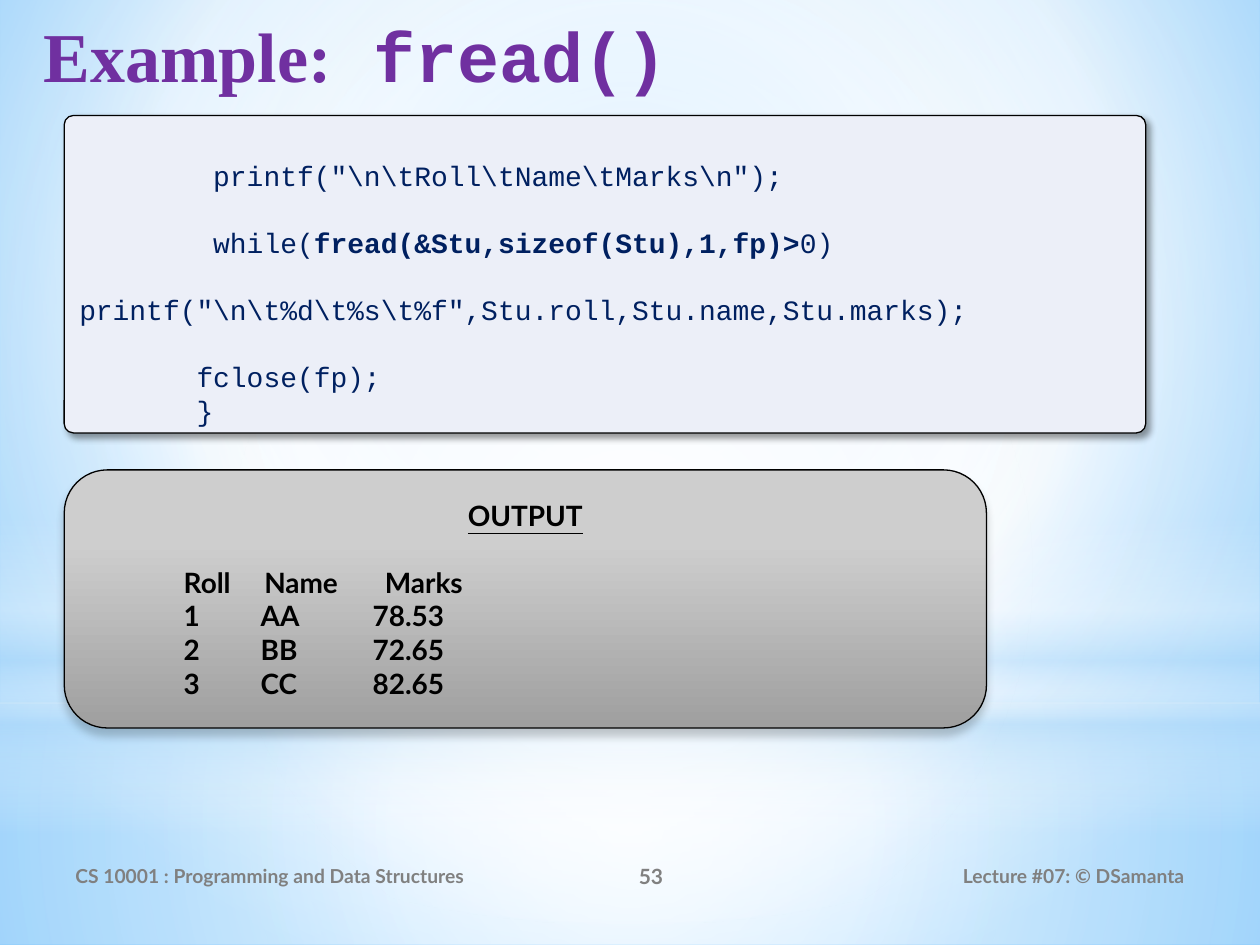
from dataclasses import dataclass

from pptx import Presentation
from pptx.dml.color import RGBColor
from pptx.enum.shapes import MSO_SHAPE
from pptx.enum.text import MSO_ANCHOR, PP_ALIGN
from pptx.oxml import parse_xml
from pptx.oxml.ns import nsdecls, qn
from pptx.util import Pt

RECT, OVAL, ROUND = MSO_SHAPE.RECTANGLE, MSO_SHAPE.OVAL, MSO_SHAPE.ROUNDED_RECTANGLE
TOP, MIDDLE = MSO_ANCHOR.TOP, MSO_ANCHOR.MIDDLE
LEFT, CENTER, RIGHT = PP_ALIGN.LEFT, PP_ALIGN.CENTER, PP_ALIGN.RIGHT


@dataclass(frozen=True)
class Theme:
    """Colours, fonts and type sizes of the slide."""
    white: str = "FFFFFF"
    sky: str = "B4DCFA"
    title: str = "7030A0"
    code: str = "002060"
    code_fill: str = "ECEFF8"
    ink: str = "000000"
    footer: str = "808080"
    serif: str = "Times New Roman"
    mono: str = "Courier New"
    sans: str = "Lato"
    title_size: float = 40
    body_size: float = 16
    number_size: float = 12
    footer_size: float = 11
    leading: float = 19.2


T = Theme()
CENTRE = (50, 50, 50, 50)


def set_gradient(fill, owner, stops, focus=None):
    """Fill with (position, colour, opacity) stops, radial if a focus is given, else downward."""
    fill.gradient()
    old = next(owner.iter(qn("a:gradFill")))
    gs = "".join(
        f'<a:gs pos="{pos * 1000}"><a:srgbClr val="{color}">'
        f'<a:alpha val="{alpha * 1000}"/></a:srgbClr></a:gs>'
        for pos, color, alpha in stops)
    if focus:
        sides = " ".join(f'{k}="{v * 1000}"' for k, v in zip("ltrb", focus))
        shade = f'<a:path path="circle"><a:fillToRect {sides}/></a:path>'
    else:
        shade = '<a:lin ang="5400000" scaled="0"/>'
    new = parse_xml(f'<a:gradFill {nsdecls("a")} rotWithShape="1">'
                    f'<a:gsLst>{gs}</a:gsLst>{shade}</a:gradFill>')
    old.getparent().replace(old, new)


def add_shape(s, kind, box):
    """Add a preset shape without line or shadow."""
    sp = s.shapes.add_shape(kind, *map(Pt, box))
    sp.shadow.inherit = False
    sp.line.fill.background()
    return sp


def add_panel(s, box, radius, shadow):
    """Add an outlined rounded panel with a (opacity, blur, distance, angle) shadow."""
    sp = add_shape(s, ROUND, box)
    sp.adjustments[0] = radius
    sp.line.color.rgb = RGBColor.from_string(T.ink)
    sp.line.width = Pt(0.75)
    alpha, blur, dist, angle = shadow
    next(sp.element.iter(qn("a:effectLst"))).append(parse_xml(
        f'<a:outerShdw {nsdecls("a")} blurRad="{Pt(blur)}" dist="{Pt(dist)}" '
        f'dir="{angle * 60000}" algn="ctr" rotWithShape="0"><a:srgbClr val="{T.ink}">'
        f'<a:alpha val="{alpha * 1000}"/></a:srgbClr></a:outerShdw>'))
    return sp


def add_run(p, text, font, size, color, bold=False, underline=False):
    """Append one formatted run."""
    r = p.add_run()
    r.text = text
    f = r.font
    f.name, f.size, f.bold, f.underline = font, Pt(size), bold, underline
    f.color.rgb = RGBColor.from_string(color)


def add_line(tf, index, gap=False, align=LEFT, tabs=()):
    """Return paragraph number index with fixed leading, a blank-line gap and tab stops."""
    p = tf.add_paragraph() if index else tf.paragraphs[0]
    if tabs:
        stops = "".join(f'<a:tab pos="{Pt(x)}" algn="l"/>' for x in tabs)
        p._p.get_or_add_pPr().append(
            parse_xml(f'<a:tabLst {nsdecls("a")}>{stops}</a:tabLst>'))
    p.alignment = align
    p.line_spacing = Pt(T.leading)
    p.space_before = Pt(T.leading if gap else 0)
    return p


def add_text_box(s, box, anchor, align=LEFT):
    """Add a wrapping text box and return its frame."""
    tf = s.shapes.add_textbox(*map(Pt, box)).text_frame
    tf.word_wrap = True
    tf.vertical_anchor = anchor
    tf.paragraphs[0].alignment = align
    return tf


def draw_background(s, width, height):
    """Lay the sky gradient and its soft light bands."""
    set_gradient(s.background.fill, s.element,
                 [(0, "9ED5FF", 100), (60, T.white, 100), (100, "5BB9FF", 100)],
                 (20, 10, 20, 60))
    horizon = 401.76
    layers = [
        (RECT, (0, horizon, width, height - horizon),
         [(0, T.white, 91), (37, T.white, 76), (100, T.sky, 79)], CENTRE),
        (RECT, (0, 0, width, horizon),
         [(0, T.white, 89), (48, T.white, 62), (100, T.sky, 79)], CENTRE),
        (RECT, (0, 296.64, width, 180),
         [(0, T.white, 0), (29, T.white, 30), (45, T.sky, 40),
          (55, T.white, 26), (65, T.sky, 60), (100, T.white, 0)], None),
        (OVAL, (0, 126, width, horizon),
         [(0, T.white, 100), (56, T.white, 0)], CENTRE),
    ]
    for kind, box, stops, focus in layers:
        sp = add_shape(s, kind, box)
        set_gradient(sp.fill, sp.element, stops, focus)


def draw_title(s, box):
    """Write the slide title."""
    tf = add_text_box(s, box, TOP)
    p = tf.paragraphs[0]
    add_run(p, "Example:", T.serif, T.title_size, T.title, True)
    add_run(p, " fread()", T.mono, T.title_size, T.title, True)


def draw_code(s, box):
    """Draw the code listing panel."""
    sp = add_panel(s, box, 0.029, (40, 4, 3, 45))
    sp.fill.solid()
    sp.fill.fore_color.rgb = RGBColor.from_string(T.code_fill)
    tf = sp.text_frame
    tf.word_wrap = True
    tf.vertical_anchor = TOP
    tf.margin_top = Pt(3.6 + T.leading)
    lines = [
        (False, [(r'        printf("\n\tRoll\tName\tMarks\n");', False)]),
        (True, [("        while(", False),
                ("fread(&Stu,sizeof(Stu),1,fp)>", True), ("0)", False)]),
        (True, [(r'printf("\n\t%d\t%s\t%f",Stu.roll,Stu.name,Stu.marks);', False)]),
        (True, [("       fclose(fp);", False)]),
        (False, [("       }", False)]),
    ]
    for i, (gap, runs) in enumerate(lines):
        p = add_line(tf, i, gap)
        for text, bold in runs:
            add_run(p, text, T.mono, T.body_size, T.code, bold)


def draw_output(s, box):
    """Draw the program output panel."""
    sp = add_panel(s, box, 0.1667, (20, 5, 4, 90))
    set_gradient(sp.fill, sp.element, [(28, "CECECE", 100), (100, "9F9F9F", 100)])
    tf = sp.text_frame
    tf.word_wrap = True
    tf.vertical_anchor = MIDDLE
    add_run(add_line(tf, 0, align=CENTER), "OUTPUT",
            T.sans, T.body_size, T.ink, True, True)
    rows = [("Roll", "Name", "Marks"), ("1", "AA", "78.53"),
            ("2", "BB", "72.65"), ("3", "CC", "82.65")]
    for i, row in enumerate(rows, 1):
        header = i == 1
        p = add_line(tf, i, header, tabs=(54, 100, 169) if header else (54, 98, 162))
        for cell in row:
            add_run(p, "\t" + cell, T.sans, T.body_size, T.ink, True)


def draw_footer(s, top, height):
    """Write the course, page number and lecture."""
    parts = [
        (36, 264, LEFT, "CS 10001 : Programming and Data Structures", T.footer_size),
        (300, 144, CENTER, "53", T.number_size),
        (486, 198, RIGHT, "Lecture #07: © DSamanta", T.footer_size),
    ]
    for left, width, align, text, size in parts:
        tf = add_text_box(s, (left, top, width, height), MIDDLE, align)
        add_run(tf.paragraphs[0], text, T.sans, size, T.footer, True)


def main():
    """Build and save the slide."""
    prs = Presentation()
    prs.slide_width, prs.slide_height = Pt(720), Pt(540)
    s = prs.slides.add_slide(prs.slide_layouts[6])
    draw_background(s, 720, 540)
    draw_title(s, (18, 3.6, 686, 79.2))
    draw_footer(s, 486, 28.8)
    draw_code(s, (36.7, 66, 618, 181.4))
    draw_output(s, (36.7, 268.5, 527, 147.5))
    prs.save("out.pptx")


if __name__ == "__main__":
    main()
